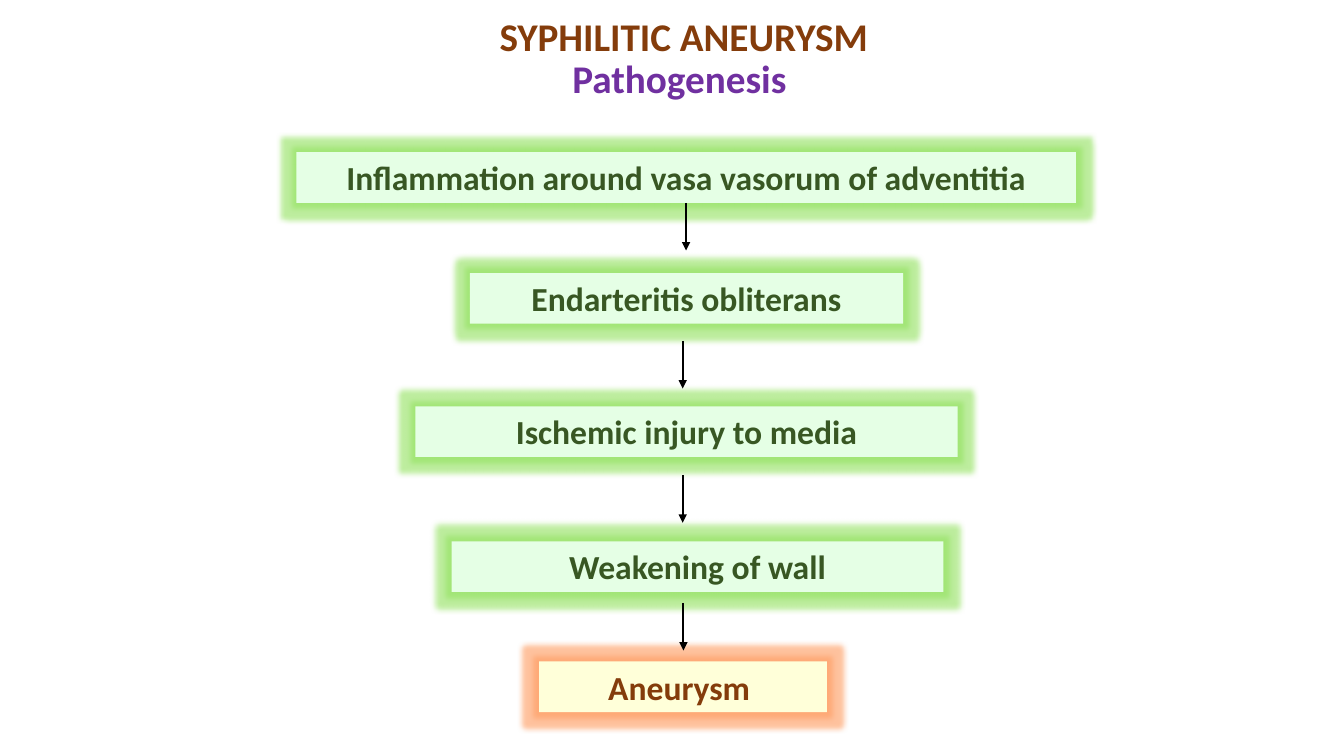
from lxml import etree
from pptx import Presentation
from pptx import util as u
from pptx.dml.color import RGBColor
from pptx.enum import shapes, text
from pptx.oxml.ns import qn

COLORS = {
    "brown": "843C0B", "purple": "7030A0", "green": "385723", "black": "000000",
    "mint": "E5FFE5", "cream": "FFFFD9", "green glow": "92E25E", "orange glow": "FF9B5E",
}
TITLE = [("SYPHILITIC ANEURYSM", "brown"), ("Pathogenesis ", "purple")]
CAUSE = ("mint", "green", "green glow")
OUTCOME = ("cream", "brown", "orange glow")

# Lengths are in hundredths of the slide's width (columns) and height (rows).
# Text, centre column, top row, width, style
STEPS = [
    ("Inflammation around vasa vasorum of adventitia", 51.05, 20.13, 58, CAUSE),
    ("Endarteritis obliterans", 51.08, 36.13, 32.25, CAUSE),
    ("Ischemic injury to media", 51.08, 53.75, 40.35, CAUSE),
    ("Weakening of wall", 51.9, 71.6, 36.6, CAUSE),
    ("Aneurysm ", 50.82, 87.5, 21.4, OUTCOME),
]
STEP_HEIGHT = 6.7
# Centre column, top row
ARROWS = [(51.05, 26.83), (50.8, 45.1), (50.8, 62.85), (50.85, 79.75)]
ARROW_LENGTH = 6.3

presentation = Presentation()
presentation.slide_width = u.Inches(13.33)
presentation.slide_height = u.Inches(7.5)


def column(share):
    return round(presentation.slide_width * share / 100)


def row(share):
    return round(presentation.slide_height * share / 100)


def color(name):
    return RGBColor.from_string(COLORS[name])


def format_run(run, size, color_name):
    run.font.name = "Calibri"
    run.font.size = u.Pt(size)
    run.font.bold = True
    run.font.color.rgb = color(color_name)


def add_glow(shape, color_name):
    effects = etree.SubElement(shape._element.spPr, qn("a:effectLst"))
    glow = etree.SubElement(effects, qn("a:glow"), rad=str(u.Pt(8)))
    tint = etree.SubElement(glow, qn("a:srgbClr"), val=COLORS[color_name])
    etree.SubElement(tint, qn("a:alpha"), val="60000")


def add_title(slide):
    title = slide.shapes.title
    title.left, title.top = column(7.75), row(0)
    title.width, title.height = column(86.25), row(15.75)
    frame = title.text_frame
    frame.text = "\v".join(line for line, _ in TITLE)
    frame.vertical_anchor = text.MSO_ANCHOR.MIDDLE
    paragraph = frame.paragraphs[0]
    paragraph.alignment = text.PP_ALIGN.CENTER
    paragraph.line_spacing = 0.9
    for run, (_, color_name) in zip(paragraph.runs, TITLE):
        format_run(run, 28, color_name)


def add_step(slide, label, center, top, width, style):
    fill, ink, glow = style
    shape = slide.shapes.add_shape(
        shapes.MSO_SHAPE.RECTANGLE, column(center - width / 2), row(top),
        column(width), row(STEP_HEIGHT))
    shape.fill.solid()
    shape.fill.fore_color.rgb = color(fill)
    shape.line.fill.background()
    add_glow(shape, glow)
    frame = shape.text_frame
    frame.text = label
    frame.word_wrap = True
    frame.auto_size = text.MSO_AUTO_SIZE.SHAPE_TO_FIT_TEXT
    frame.vertical_anchor = text.MSO_ANCHOR.TOP
    paragraph = frame.paragraphs[0]
    paragraph.alignment = text.PP_ALIGN.CENTER
    format_run(paragraph.runs[0], 24, ink)
    return shape


def add_arrow(slide, center, top):
    arrow = slide.shapes.add_connector(
        shapes.MSO_CONNECTOR.STRAIGHT, column(center), row(top),
        column(center), row(top + ARROW_LENGTH))
    arrow.line.color.rgb = color("black")
    arrow.line.width = u.Pt(1.5)
    properties = arrow._element.spPr
    etree.SubElement(properties.find(qn("a:ln")), qn("a:tailEnd"), type="triangle")
    etree.SubElement(properties, qn("a:effectLst"))
    return arrow


def main():
    slide = presentation.slides.add_slide(presentation.slide_layouts[5])
    add_title(slide)
    steps = [add_step(slide, *step) for step in STEPS]
    arrows = [add_arrow(slide, *arrow) for arrow in ARROWS]
    arrows[0].begin_connect(steps[0], 2)
    presentation.save("out.pptx")


if __name__ == "__main__":
    main()
